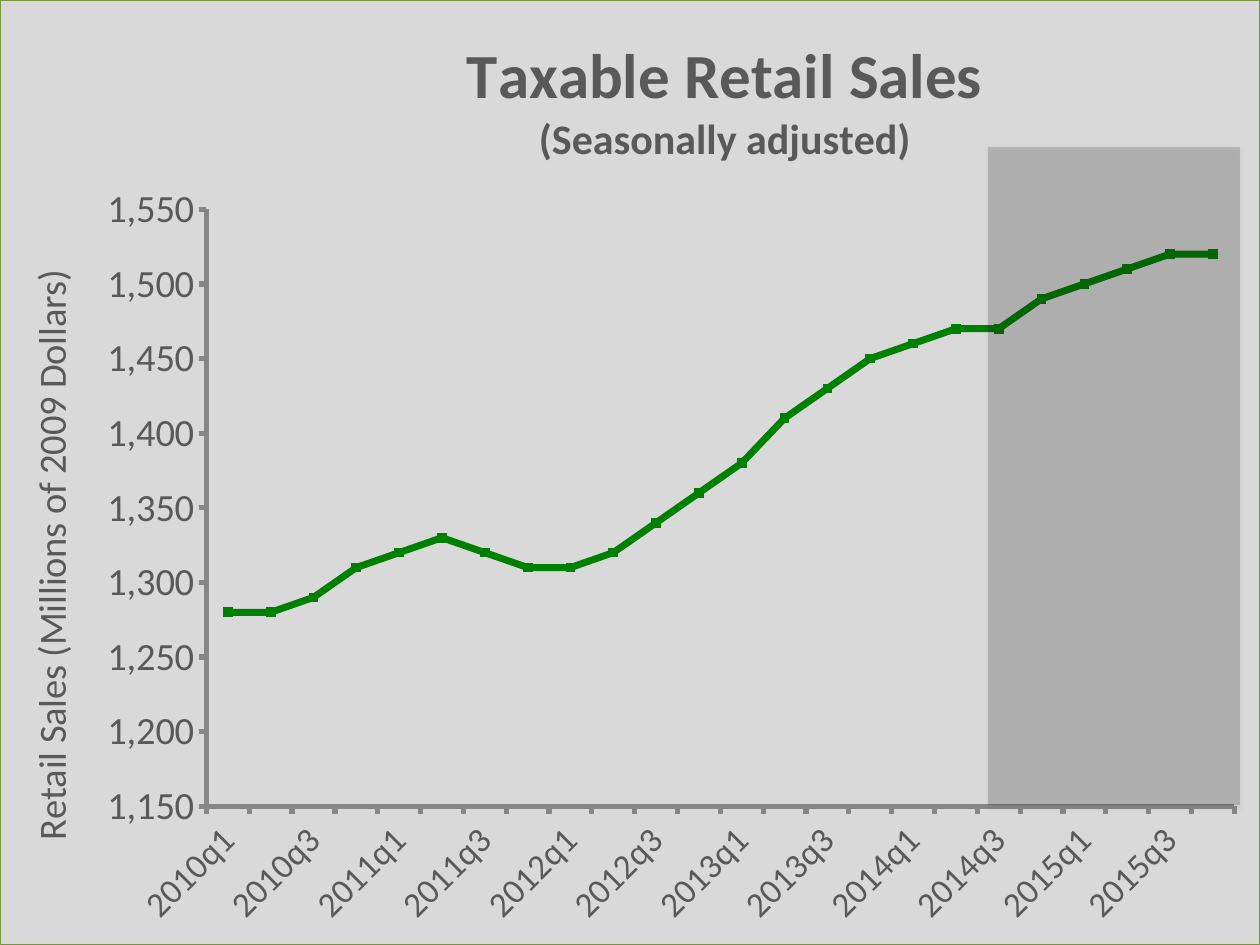
from lxml import etree
from pptx import Presentation
from pptx.chart.data import CategoryChartData
from pptx.dml.color import RGBColor
from pptx.enum.chart import XL_CHART_TYPE, XL_MARKER_STYLE, XL_TICK_MARK
from pptx.enum.shapes import MSO_SHAPE
from pptx.oxml import parse_xml
from pptx.oxml.ns import nsdecls, qn
from pptx.util import Emu, Pt

PX_PER_INCH = 126
W, H = 1260, 945
FONT = "Calibri"
GRAY = RGBColor(0xD9, 0xD9, 0xD9)
TEXT = RGBColor(0x59, 0x59, 0x59)
AXIS = RGBColor(0x86, 0x86, 0x86)
GREEN = RGBColor(0x00, 0x80, 0x00)
OLIVE = RGBColor(0x77, 0x93, 0x3C)
SHADE = RGBColor(0x0D, 0x0D, 0x0D)

QUARTERS = [f"{year}q{q}" for year in range(2010, 2016) for q in range(1, 5)]
SALES = [1280, 1280, 1290, 1310, 1320, 1330, 1320, 1310,
         1310, 1320, 1340, 1360, 1380, 1410, 1430, 1450,
         1460, 1470, 1470, 1490, 1500, 1510, 1520, 1520]


def px(n):
    return Emu(round(n * 914400 / PX_PER_INCH))


def set_font(font, size, bold=False):
    font.name = FONT
    font.size = Pt(size)
    font.bold = bold
    font.color.rgb = TEXT


def add_run(p, text, size, bold=False):
    r = p.add_run()
    r.text = text
    set_font(r.font, size, bold)


def layout_xml(x, y, w=None, h=None):
    inner = '<c:layoutTarget val="inner"/>' if w else ""
    size = f'<c:w val="{w / W}"/><c:h val="{h / H}"/>' if w else ""
    return parse_xml(
        f'<c:layout {nsdecls("c")}><c:manualLayout>{inner}'
        '<c:xMode val="edge"/><c:yMode val="edge"/>'
        f'<c:x val="{x / W}"/><c:y val="{y / H}"/>{size}'
        '</c:manualLayout></c:layout>')


def place_title(title, x, y):
    el = title._element
    for old in el.findall(qn("c:layout")):
        el.remove(old)
    el.find(qn("c:tx")).addnext(layout_xml(x, y))


def rotate(body, degrees):
    body.set("rot", str(degrees * 60000))
    body.set("vert", "horz")


def fill_background(chart):
    area = parse_xml(
        f'<c:spPr {nsdecls("c", "a")}><a:solidFill><a:srgbClr val="{GRAY}"/></a:solidFill>'
        f'<a:ln w="{Pt(0.75)}"><a:solidFill><a:srgbClr val="{OLIVE}"/></a:solidFill></a:ln></c:spPr>')
    chart._chartSpace.find(qn("c:chart")).addnext(area)
    plot_area = chart._chartSpace.chart.plotArea
    for old in plot_area.findall(qn("c:layout")):
        plot_area.remove(old)
    plot_area.insert(0, layout_xml(206, 209, 1029, 598))
    plot_area.append(parse_xml(
        f'<c:spPr {nsdecls("c", "a")}><a:solidFill><a:srgbClr val="{GRAY}"/></a:solidFill></c:spPr>'))


def style_axis(axis, size):
    axis.has_major_gridlines = False
    axis.major_tick_mark = XL_TICK_MARK.OUTSIDE
    axis.minor_tick_mark = XL_TICK_MARK.NONE
    axis.format.line.color.rgb = AXIS
    axis.format.line.width = Pt(3)
    set_font(axis.tick_labels.font, size)


def style_axes(chart):
    cat, val = chart.category_axis, chart.value_axis
    style_axis(cat, 20)
    style_axis(val, 22)
    rotate(cat._element.find(qn("c:txPr")).find(qn("a:bodyPr")), -45)
    no_multi = cat._element.find(qn("c:noMultiLvlLbl"))
    for tag, step in (("tickLblSkip", 2), ("tickMarkSkip", 1)):
        no_multi.addprevious(parse_xml(f'<c:{tag} {nsdecls("c")} val="{step}"/>'))
    val.minimum_scale, val.maximum_scale, val.major_unit = 1150, 1550, 50
    val.tick_labels.number_format = "#,##0"
    val.tick_labels.number_format_is_linked = False
    tf = val.axis_title.text_frame
    add_run(tf.paragraphs[0], "Retail Sales (Millions of 2009 Dollars)", 22)
    rotate(tf._txBody.bodyPr, -90)
    place_title(val.axis_title, 17, 263)


def style_series(series):
    series.smooth = False
    series.format.line.color.rgb = GREEN
    series.format.line.width = Pt(4)
    marker = series.marker
    marker.style = XL_MARKER_STYLE.SQUARE
    marker.size = 5
    marker.format.fill.solid()
    marker.format.fill.fore_color.rgb = GREEN
    marker.format.line.color.rgb = GREEN


def add_sales_chart(s):
    data = CategoryChartData(number_format="#,##0")
    data.categories = QUARTERS
    data.add_series("Series 1", SALES)
    chart = s.shapes.add_chart(
        XL_CHART_TYPE.LINE_MARKERS, 0, 0, px(W), px(H), data).chart
    chart.has_legend = False
    chart.font.name = FONT
    chart.font.size = Pt(10)
    chart.plots[0].vary_by_categories = False
    tf = chart.chart_title.text_frame
    add_run(tf.paragraphs[0], "Taxable Retail Sales", 36, True)
    add_run(tf.add_paragraph(), "(Seasonally adjusted)", 24, True)
    place_title(chart.chart_title, 463, 31)
    fill_background(chart)
    style_axes(chart)
    style_series(chart.plots[0].series[0])


def add_forecast_band(s):
    sp = s.shapes.add_shape(MSO_SHAPE.RECTANGLE, px(988), px(147), px(252), px(658))
    sp.shadow.inherit = False
    sp.fill.solid()
    sp.fill.fore_color.rgb = SHADE
    sp.line.fill.background()
    color = sp._element.spPr.find(qn("a:solidFill"))[0]
    etree.SubElement(color, qn("a:alpha")).set("val", "16000")
    effects = sp._element.spPr.find(qn("a:effectLst"))
    effects.append(parse_xml(
        f'<a:outerShdw {nsdecls("a")} blurRad="{Pt(3.1)}" dist="{Pt(1.8)}" dir="5400000" rotWithShape="0">'
        '<a:srgbClr val="000000"><a:alpha val="35000"/></a:srgbClr></a:outerShdw>'))


def main():
    prs = Presentation()
    prs.slide_width, prs.slide_height = px(W), px(H)
    s = prs.slides.add_slide(prs.slide_layouts[6])
    add_sales_chart(s)
    add_forecast_band(s)
    prs.save("out.pptx")


if __name__ == "__main__":
    main()
